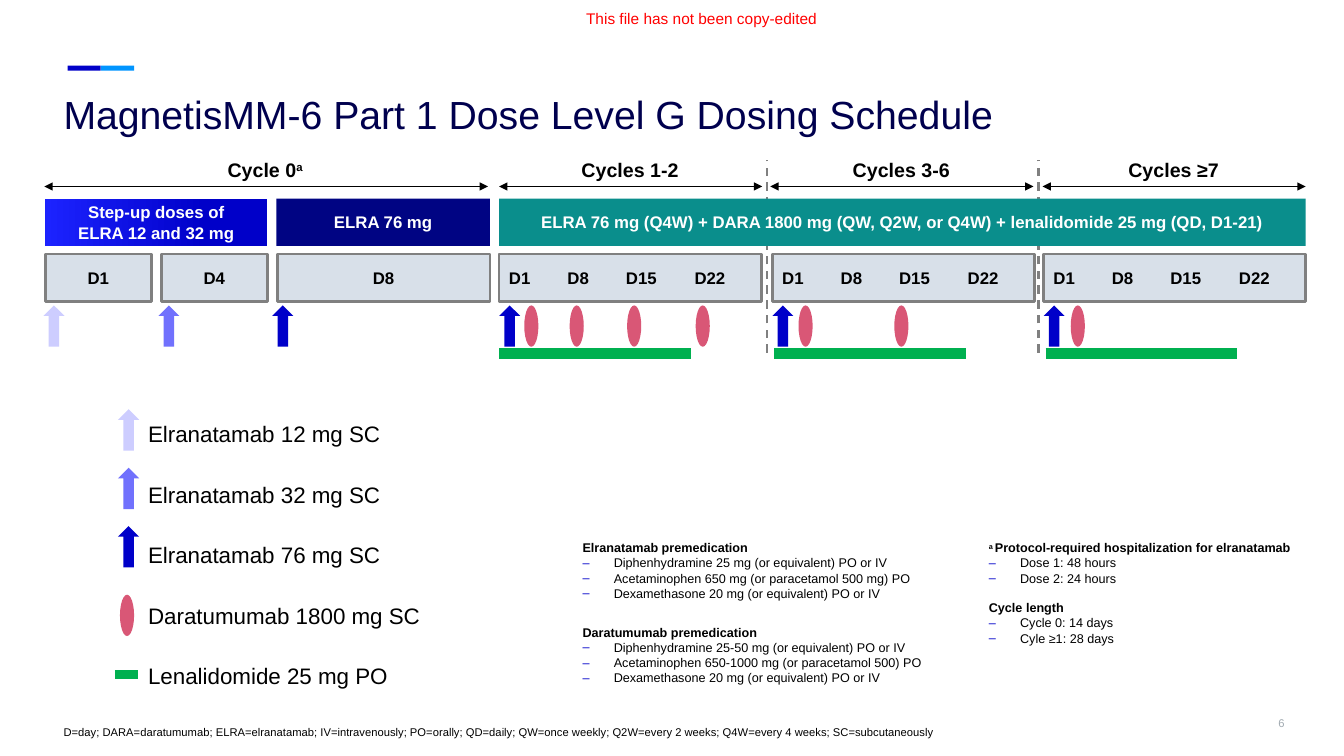
"""Builds the dosing schedule slide for MagnetisMM-6 Part 1 Dose Level G."""
from dataclasses import dataclass

from lxml import etree
from pptx import Presentation
from pptx.dml.color import RGBColor
from pptx.enum.dml import MSO_LINE
from pptx.enum.shapes import MSO_CONNECTOR, MSO_SHAPE
from pptx.enum.text import MSO_ANCHOR, MSO_AUTO_SIZE, PP_ALIGN
from pptx.oxml.ns import qn
from pptx.util import Inches, Pt

LEFT, CENTER, RIGHT = PP_ALIGN.LEFT, PP_ALIGN.CENTER, PP_ALIGN.RIGHT
TOP, MIDDLE, BOTTOM = MSO_ANCHOR.TOP, MSO_ANCHOR.MIDDLE, MSO_ANCHOR.BOTTOM
RECTANGLE, ARROW, OVAL = MSO_SHAPE.RECTANGLE, MSO_SHAPE.UP_ARROW, MSO_SHAPE.OVAL
STRAIGHT, DASH, NO_AUTOFIT = MSO_CONNECTOR.STRAIGHT, MSO_LINE.DASH, MSO_AUTO_SIZE.NONE


@dataclass(frozen=True)
class Theme:
    font: str = "Arial"
    black: str = "000000"
    white: str = "FFFFFF"
    red: str = "FF0000"
    gray: str = "808080"
    page_gray: str = "A1AAB1"
    day_fill: str = "D8E0E9"
    title_navy: str = "00004E"
    navy: str = "000483"
    blue: str = "0000C9"
    bright_blue: str = "1C23FF"
    sky: str = "0095FF"
    dose_12: str = "CDCDFF"
    dose_32: str = "7171FD"
    teal: str = "0A8E8C"
    daratumumab: str = "D95776"
    lenalidomide: str = "00B050"
    title_size: float = 28
    legend_size: float = 16
    heading_size: float = 14
    box_size: float = 12
    notice_size: float = 11
    note_size: float = 9
    small_size: float = 8


class SlideBuilder:
    def __init__(self, presentation, theme):
        self.theme = theme
        self.slide = presentation.slides.add_slide(presentation.slide_layouts[1])

    def add_run(self, paragraph, text, size, color, bold=False, superscript=False):
        run = paragraph.add_run()
        run.text = text
        font = run.font
        font.name, font.size, font.bold = self.theme.font, Pt(size), bold
        font.color.rgb = RGBColor.from_string(color)
        if superscript:
            run._r.get_or_add_rPr().set("baseline", "30000")

    def fill_frame(self, frame, lines, size, color, bold=False, align=LEFT, anchor=TOP, gap=0):
        frame.word_wrap, frame.auto_size = True, NO_AUTOFIT
        frame.vertical_anchor = anchor
        for index, line in enumerate(lines):
            paragraph = frame.paragraphs[0] if index == 0 else frame.add_paragraph()
            paragraph.alignment = align
            paragraph.space_before = Pt(gap if index else 0)
            for part, text in enumerate(line.split("\n")):
                if part:
                    paragraph.add_line_break()
                self.add_run(paragraph, text, size, color, bold)
        return frame

    def text(self, box, lines, size, color, **style):
        shape = self.slide.shapes.add_textbox(*map(Inches, box))
        return self.fill_frame(shape.text_frame, lines, size, color, **style)

    def placeholder(self, index, box, lines, size, color, anchor):
        shape = self.slide.placeholders[index]
        shape.left, shape.top, shape.width, shape.height = map(Inches, box)
        frame = self.fill_frame(shape.text_frame, lines, size, color, anchor=anchor)
        for paragraph in frame.paragraphs:
            properties = paragraph._p.get_or_add_pPr()
            properties.set("marL", "0")
            properties.set("indent", "0")
            etree.SubElement(properties, qn("a:buNone"))
        return frame

    def shape(self, kind, box, fill, outline=None):
        shape = self.slide.shapes.add_shape(kind, *map(Inches, box))
        shape.shadow.inherit = False
        shape.fill.solid()
        shape.fill.fore_color.rgb = RGBColor.from_string(fill)
        if outline:
            shape.line.color.rgb = RGBColor.from_string(outline)
            shape.line.width = Pt(2)
        else:
            shape.line.fill.background()
        return shape

    def label_box(self, box, label, fill, color, outline=None, align=CENTER):
        shape = self.shape(RECTANGLE, box, fill, outline)
        self.fill_frame(shape.text_frame, [label], self.theme.box_size, color,
                        bold=True, align=align, anchor=MIDDLE)
        return shape

    def day_box(self, left, width, label, align=CENTER):
        return self.label_box((left, 2.52, width, 0.47), label, self.theme.day_fill,
                              self.theme.black, self.theme.gray, align)

    def week_box(self, left, tabs):
        shape = self.day_box(left, 2.6, "D1\tD8\tD15\tD22", LEFT)
        properties = shape.text_frame.paragraphs[0]._p.get_or_add_pPr()
        tab_list = etree.SubElement(properties, qn("a:tabLst"))
        for position in tabs:
            etree.SubElement(tab_list, qn("a:tab"), pos=str(Inches(position)), algn="l")

    def line(self, start, end, color, width, dashed=False, arrows=False):
        connector = self.slide.shapes.add_connector(STRAIGHT, *map(Inches, start + end))
        connector.line.color.rgb = RGBColor.from_string(color)
        connector.line.width = Pt(width)
        if dashed:
            connector.line.dash_style = DASH
        if arrows:
            outline = connector._element.spPr.find(qn("a:ln"))
            for tip in ("a:headEnd", "a:tailEnd"):
                etree.SubElement(outline, qn(tip), type="triangle")
        etree.SubElement(connector._element.spPr, qn("a:effectLst"))

    def span(self, left, right):
        self.line((left, 1.85), (right, 1.85), self.theme.black, 0.75, arrows=True)

    def heading(self, center, label):
        return self.text((center - 0.7, 1.52, 1.4, 0.4), [label], self.theme.heading_size,
                         self.theme.black, bold=True, align=CENTER)

    def dose_arrow(self, left, top, color):
        self.shape(ARROW, (left, top, 0.21, 0.41), color)

    def dose_oval(self, left, top):
        self.shape(OVAL, (left, top, 0.14, 0.41), self.theme.daratumumab)

    def note(self, box, sections, mark=None):
        theme = self.theme
        frame = self.slide.shapes.add_textbox(*map(Inches, box)).text_frame
        frame.word_wrap = True
        for index, (title, items) in enumerate(sections):
            paragraph = frame.add_paragraph() if index else frame.paragraphs[0]
            paragraph.space_before = Pt(10.4 if index else 0)
            if mark and index == 0:
                self.add_run(paragraph, mark, theme.note_size, theme.black, True, True)
            self.add_run(paragraph, title, theme.note_size, theme.black, True)
            for item in items:
                paragraph = frame.add_paragraph()
                self.add_run(paragraph, item, theme.note_size, theme.black)
                properties = paragraph._p.get_or_add_pPr()
                properties.set("marL", str(Inches(0.31)))
                properties.set("indent", str(-Inches(0.31)))
                bullet_color = etree.SubElement(properties, qn("a:buClr"))
                etree.SubElement(bullet_color, qn("a:srgbClr"), val=theme.blue)
                etree.SubElement(properties, qn("a:buFont"), typeface=theme.font)
                etree.SubElement(properties, qn("a:buChar"), char="–")


def add_frame(builder, theme):
    for left, color in ((0.67, theme.blue), (1, theme.sky)):
        builder.shape(RECTANGLE, (left, 0.65, 0.33, 0.05), color)
    builder.text((5.46, 0.04, 3, 0.3), ["This file has not been copy-edited"],
                 theme.notice_size, theme.red, align=CENTER)
    builder.text((12.01, 6.89, 0.83, 0.57), ["6"], theme.small_size, theme.page_gray,
                 align=RIGHT, anchor=MIDDLE)
    title = builder.placeholder(0, (0.53, 0.8, 11.5, 0.67),
                                ["MagnetisMM-6 Part 1 Dose Level G Dosing Schedule"],
                                theme.title_size, theme.title_navy, TOP)
    title.margin_top = title.margin_bottom = Inches(0.1)
    builder.placeholder(1, (0.53, 7.14, 12.27, 0.24), [
        "D=day; DARA=daratumumab; ELRA=elranatamab; IV=intravenously; PO=orally; QD=daily; "
        "QW=once weekly; Q2W=every 2 weeks; Q4W=every 4 weeks; SC=subcutaneously"],
        theme.small_size, theme.black, BOTTOM)


def add_schedule(builder, theme):
    heading = builder.heading(2.63, "Cycle 0")
    builder.add_run(heading.paragraphs[0], "a", theme.heading_size, theme.black, True, True)
    builder.span(0.44, 4.84)
    step_up = builder.label_box((0.45, 1.97, 2.2, 0.47), "Step-up doses of\nELRA 12 and 32 mg",
                                theme.blue, theme.white)
    step_up.fill.gradient()
    step_up.fill.gradient_angle = 180
    stops = zip(step_up.fill.gradient_stops, (0.28, 1), (theme.blue, theme.bright_blue))
    for stop, position, color in stops:
        stop.position, stop.color.rgb = position, RGBColor.from_string(color)
    builder.label_box((2.74, 1.97, 2.12, 0.47), "ELRA 76 mg", theme.navy, theme.white)
    step_days = (("D1", 0.45, 1.05, 0.43, theme.dose_12), ("D4", 1.6, 1.05, 1.57, theme.dose_32),
                 ("D8", 2.75, 2.11, 2.7, theme.blue))
    for day, left, width, arrow_left, color in step_days:
        builder.day_box(left, width, day)
        builder.dose_arrow(arrow_left, 3.03, color)

    for left in (7.61, 10.3):
        builder.line((left, 3.5), (left, 1.59), theme.gray, 1.5, dashed=True)
    builder.label_box((4.95, 1.97, 8, 0.47), "ELRA 76 mg (Q4W) + DARA 1800 mg (QW, Q2W, or Q4W) "
                      "+ lenalidomide 25 mg (QD, D1-21)", theme.teal, theme.white)
    cycles = (("Cycles 1-2", 6.25, 4.95, 4.95, 4.95, (5.2, 5.65, 6.22, 6.9)),
              ("Cycles 3-6", 8.94, 7.64, 7.66, 7.68, (7.92, 8.87)),
              ("Cycles ≥7", 11.64, 10.34, 10.35, 10.37, (10.62,)))
    for label, center, span_left, box_left, bar_left, ovals in cycles:
        builder.heading(center, label)
        builder.span(span_left, span_left + 2.61)
        builder.week_box(box_left, (0.58, 1.16, 1.84))
        builder.dose_arrow(box_left, 3.03, theme.blue)
        for left in ovals:
            builder.dose_oval(left, 3.03)
        builder.line((bar_left, 3.51), (bar_left + 1.9, 3.51), theme.lenalidomide, 8)


def add_legend(builder, theme):
    builder.text((1.37, 4.12, 3.1, 2.75), [
        "Elranatamab 12 mg SC", "Elranatamab 32 mg SC", "Elranatamab 76 mg SC",
        "Daratumumab 1800 mg SC", "Lenalidomide 25 mg PO"],
        theme.legend_size, theme.black, gap=24)
    for row, color in enumerate((theme.dose_12, theme.dose_32, theme.blue)):
        builder.dose_arrow(1.17, 4.06 + 0.58 * row, color)
    builder.dose_oval(1.19, 5.9)
    builder.line((1.14, 6.69), (1.37, 6.69), theme.lenalidomide, 6.5)


def add_notes(builder):
    builder.note((5.68, 5.31, 3.84, 0.8), [("Elranatamab premedication", [
        "Diphenhydramine 25 mg (or equivalent) PO or IV",
        "Acetaminophen 650 mg (or paracetamol 500 mg) PO",
        "Dexamethasone 20 mg (or equivalent) PO or IV"])])
    builder.note((5.68, 6.15, 4, 0.72), [("Daratumumab premedication", [
        "Diphenhydramine 25-50 mg (or equivalent) PO or IV",
        "Acetaminophen 650-1000 mg (or paracetamol 500) PO",
        "Dexamethasone 20 mg (or equivalent) PO or IV"])])
    builder.note((9.71, 5.31, 3.27, 1.44), [
        ("Protocol-required hospitalization for elranatamab",
         ["Dose 1: 48 hours", "Dose 2: 24 hours"]),
        ("Cycle length", ["Cycle 0: 14 days", "Cyle ≥1: 28 days"])], mark="a ")


def main():
    presentation = Presentation()
    presentation.slide_width, presentation.slide_height = Inches(13.33), Inches(7.5)
    theme = Theme()
    builder = SlideBuilder(presentation, theme)
    add_frame(builder, theme)
    add_schedule(builder, theme)
    add_legend(builder, theme)
    add_notes(builder)
    presentation.save("out.pptx")


if __name__ == "__main__":
    main()
